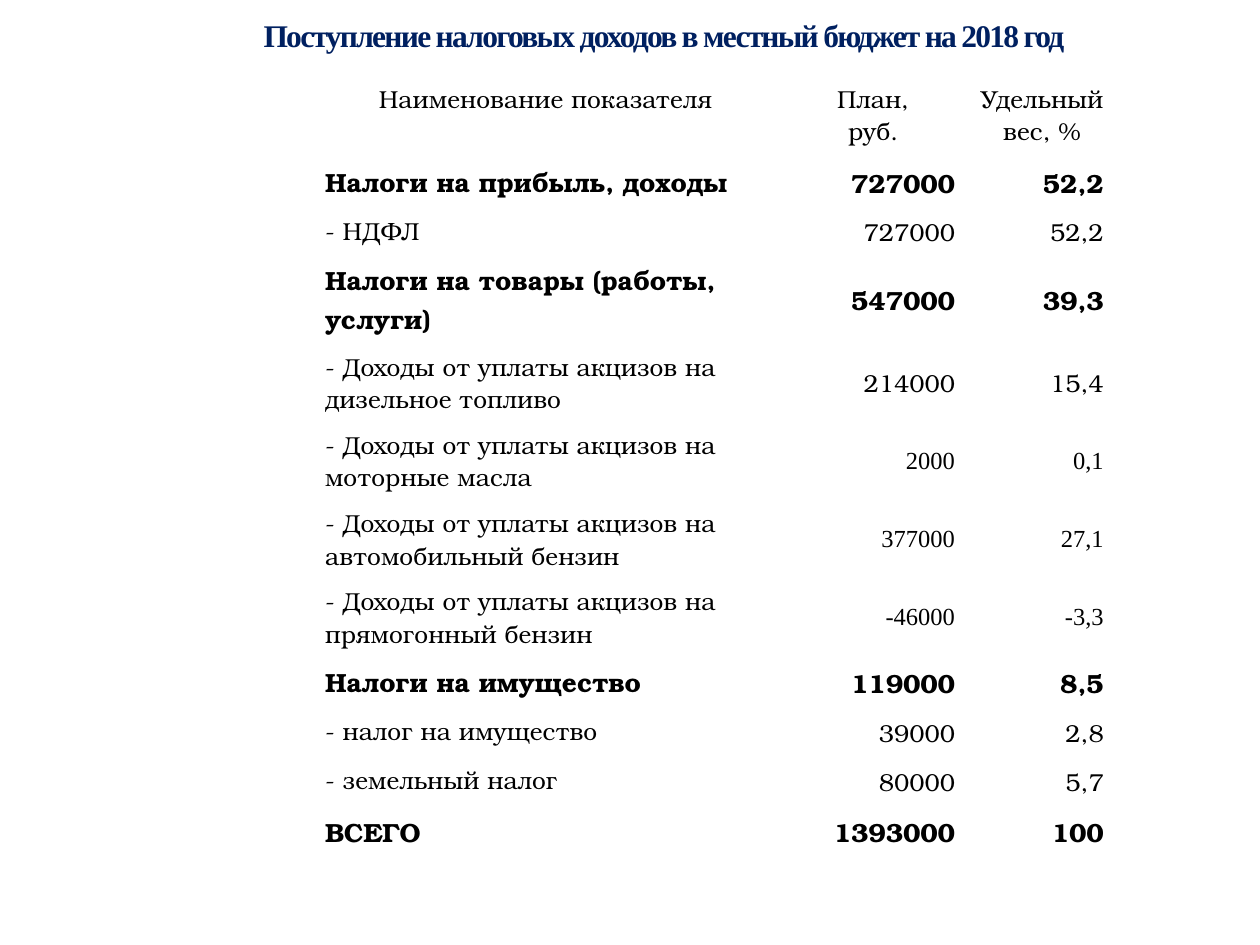
from lxml import etree
from pptx import Presentation
from pptx.dml.color import RGBColor
from pptx.enum.text import MSO_ANCHOR, PP_ALIGN
from pptx.oxml.ns import qn
from pptx.util import Inches, Pt

TOP, MIDDLE = MSO_ANCHOR.TOP, MSO_ANCHOR.MIDDLE
LEFT, CENTER, RIGHT = PP_ALIGN.LEFT, PP_ALIGN.CENTER, PP_ALIGN.RIGHT
SERIF, TIMES = "TeX Gyre Bonum", "Times New Roman"
TITLE_ONLY = 5

COLORS = {"title": "002060", "outline": "AFCCDE", "text": "000000"}
FORMATS = {
    "title": {"name": TIMES, "size": Pt(18), "bold": True},
    "item": {"name": SERIF, "size": Pt(14), "bold": False},
    "times": {"name": TIMES, "size": Pt(14), "bold": False},
    "group": {"name": SERIF, "size": Pt(15), "bold": True},
}
TITLE = "Поступление налоговых доходов в местный бюджет на 2018 год"
HEADERS = ("Наименование показателя", "План,\nруб.", "Удельный вес, %")
COLUMN_WIDTHS = (3.7, 1.5, 1.18)
HEADER_HEIGHT, SPACER_HEIGHT = 0.64, 0.02
TAX_ROWS = (
    (0.41, "group", "Налоги на прибыль, доходы", "727000", "52,2"),
    (0.37, "item", "- НДФЛ", "727000", "52,2"),
    (0.7, "group", "Налоги на товары (работы, услуги)", "547000", "39,3"),
    (0.62, "item", "- Доходы от уплаты акцизов на дизельное топливо", "214000", "15,4"),
    (0.62, "times", "- Доходы от уплаты акцизов на моторные масла", "2000", "0,1"),
    (0.62, "times", "- Доходы от уплаты акцизов на автомобильный бензин", "377000", "27,1"),
    (0.62, "times", "- Доходы от уплаты акцизов на прямогонный бензин", "-46000", "-3,3"),
    (0.41, "group", "Налоги на имущество", "119000", "8,5"),
    (0.39, "item", "- налог на имущество", "39000", "2,8"),
    (0.39, "item", "- земельный налог", "80000", "5,7"),
    (0.39, "group", "ВСЕГО", "1393000", "100"),
)


def write_text(frame, text, style, color, alignment):
    """Fill a text frame, one paragraph a line, in a named format."""
    frame.text = text
    for paragraph in frame.paragraphs:
        paragraph.alignment = alignment
        for run in paragraph.runs:
            for attribute, value in FORMATS[style].items():
                setattr(run.font, attribute, value)
            run.font.color.rgb = RGBColor.from_string(COLORS[color])


def outline_text(run):
    """Tighten the letters and give them a thin translucent outline."""
    properties = run.font._element
    properties.set("spc", "-100")
    line = etree.Element(qn("a:ln"), w=str(Pt(0.25)))
    fill = etree.SubElement(line, qn("a:solidFill"))
    color = etree.SubElement(fill, qn("a:srgbClr"), val=COLORS["outline"])
    etree.SubElement(color, qn("a:alpha"), val="25000")
    properties.insert(0, line)


def add_title(slide):
    """Place and format the title placeholder."""
    title = slide.shapes.title
    title.left, title.top = Inches(1.61), Inches(0)
    title.width, title.height = Inches(7.32), Inches(0.55)
    frame = title.text_frame
    frame.word_wrap = True
    frame.vertical_anchor = MIDDLE
    write_text(frame, TITLE, "title", "title", CENTER)
    outline_text(frame.paragraphs[0].runs[0])


def fill_cell(cell, text, style, alignment, anchor):
    """Write one table cell without a fill."""
    cell.fill.background()
    cell.vertical_anchor = anchor
    write_text(cell.text_frame, text, style, "text", alignment)


def shrink_row(row):
    """Reduce an empty row to a thin spacer."""
    for cell in row.cells:
        cell.fill.background()
        cell.margin_top = cell.margin_bottom = 0
        paragraph = cell.text_frame.paragraphs[0]._p
        etree.SubElement(paragraph, qn("a:endParaRPr"), sz="100")


def add_tax_table(slide):
    """Add the table of tax revenue."""
    heights = [HEADER_HEIGHT, *(row[0] for row in TAX_ROWS), SPACER_HEIGHT]
    frame = slide.shapes.add_table(
        len(heights), len(HEADERS), Inches(2.48), Inches(0.6),
        Inches(sum(COLUMN_WIDTHS)), Inches(sum(heights)))
    table = frame.table
    table.first_row = table.horz_banding = False
    for column, width in zip(table.columns, COLUMN_WIDTHS):
        column.width = Inches(width)
    for row, height in zip(table.rows, heights):
        row.height = Inches(height)
    for index, header in enumerate(HEADERS):
        fill_cell(table.cell(0, index), header, "item", CENTER, TOP)
    for index, (_, style, name, *values) in enumerate(TAX_ROWS, 1):
        name_style = "group" if style == "group" else "item"
        fill_cell(table.cell(index, 0), name, name_style, LEFT, TOP)
        for column, value in enumerate(values, 1):
            fill_cell(table.cell(index, column), value, style, RIGHT, MIDDLE)
    shrink_row(table.rows[len(heights) - 1])


def main():
    """Build and save the presentation."""
    presentation = Presentation()
    presentation.slide_width, presentation.slide_height = Inches(10), Inches(7.5)
    slide = presentation.slides.add_slide(presentation.slide_layouts[TITLE_ONLY])
    add_tax_table(slide)
    add_title(slide)
    presentation.save("out.pptx")


if __name__ == "__main__":
    main()
